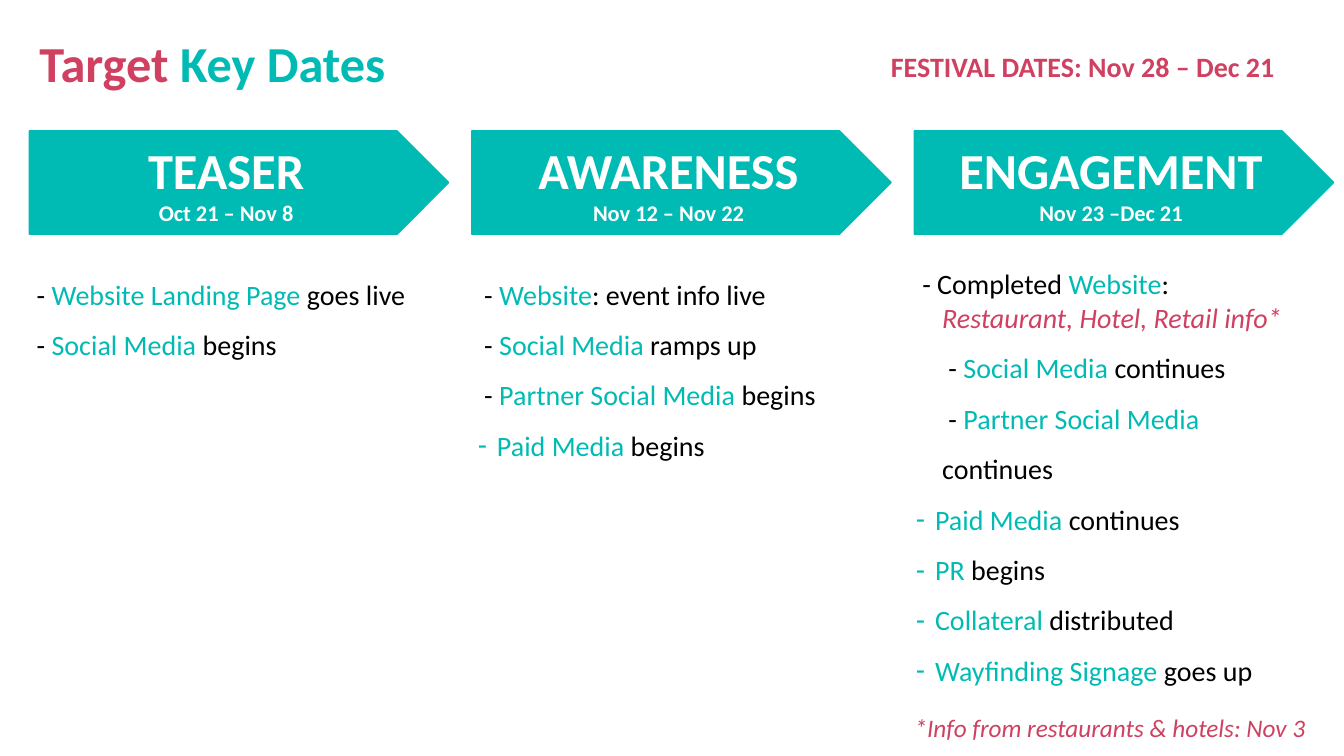
from lxml import etree
from pptx import Presentation
from pptx.dml.color import RGBColor
from pptx.enum.shapes import MSO_SHAPE
from pptx.enum.text import MSO_ANCHOR, MSO_AUTO_SIZE, PP_ALIGN
from pptx.oxml.ns import qn
from pptx.util import Cm, Pt

PENTAGON = MSO_SHAPE.PENTAGON
TOP, MIDDLE = MSO_ANCHOR.TOP, MSO_ANCHOR.MIDDLE
NO_AUTOFIT = MSO_AUTO_SIZE.NONE
LEFT, CENTER = PP_ALIGN.LEFT, PP_ALIGN.CENTER

TEAL, ROSE, BLACK, WHITE = "00BBB4", "CF4061", "000000", "FFFFFF"
FONT = "Calibri"

# Content
TITLE = [("Target ", ROSE), ("Key Dates", TEAL)]
FESTIVAL = "FESTIVAL DATES: Nov 28 – Dec 21"
FOOTNOTE = "*Info from restaurants & hotels: Nov 3"

# Paragraph styles: left margin (cm), first-line indent (cm), line spacing, bullet
PLAIN = (0, 0, 1.5, None)
HANGING = (0.66, -0.66, 1.0, None)
INDENTED = (0.66, 0, 1.5, None)
DASHED = (0.48, -0.48, 1.5, "-")

# Phases: name, dates, activities as (style, lead, highlight, rest, detail line)
PHASES = [
    ("TEASER", "Oct 21 – Nov 8", [
        (PLAIN, " - ", "Website Landing Page ", "goes live", ""),
        (PLAIN, " - ", "Social Media ", "begins", ""),
    ]),
    ("AWARENESS", "Nov 12 – Nov 22", [
        (PLAIN, " - ", "Website", ": event info live", ""),
        (PLAIN, " - ", "Social Media", " ramps up", ""),
        (PLAIN, " - ", "Partner Social Media", " begins", ""),
        (DASHED, "", "Paid Media", " begins", ""),
    ]),
    ("ENGAGEMENT", "Nov 23 –Dec 21", [
        (HANGING, " - Completed ", "Website", ":", "Restaurant, Hotel, Retail info*"),
        (INDENTED, " - ", "Social Media ", "continues", ""),
        (INDENTED, " - ", "Partner Social Media ", "continues", ""),
        (DASHED, "", "Paid Media ", "continues", ""),
        (DASHED, "", "PR", " begins", ""),
        (DASHED, "", "Collateral", " distributed", ""),
        (DASHED, "", "Wayfinding Signage ", "goes up", ""),
    ]),
]

# Layout, in cm
ARROW_LEFT, ARROW_TOP, ARROW_PITCH = 0.74, 3.3, 11.15
ARROW_WIDTH, ARROW_HEIGHT = 10.57, 2.6
LIST_WIDTH = 10.31
# Placeholder index, left, top, height of each activity list
LIST_BOXES = [(2, 0.51, 6.43, 4.95), (4, 11.79, 6.43, 9.07), (1, 22.83, 6.6, 13.08)]


def rgb(value):
    return RGBColor.from_string(value)


def place(shape, left, top, width, height):
    shape.left, shape.top = Cm(left), Cm(top)
    shape.width, shape.height = Cm(width), Cm(height)


def add_run(paragraph, text, color, size, bold=False, italic=False):
    run = paragraph.add_run()
    run.text = text
    font = run.font
    font.name, font.size, font.bold, font.italic = FONT, Pt(size), bold, italic
    font.color.rgb = rgb(color)


def style_paragraph(paragraph, style):
    margin, indent, spacing, bullet = style
    properties = paragraph._p.get_or_add_pPr()
    properties.set("marL", str(Cm(margin)))
    properties.set("indent", str(Cm(indent)))
    if bullet:
        etree.SubElement(properties, qn("a:buChar")).set("char", bullet)
    else:
        etree.SubElement(properties, qn("a:buNone"))
    paragraph.alignment = LEFT
    paragraph.line_spacing = spacing
    paragraph.space_before = paragraph.space_after = Pt(0)


def fill_list(frame, activities):
    frame.word_wrap = True
    frame.auto_size = NO_AUTOFIT
    frame.vertical_anchor = TOP
    for i, (style, lead, highlight, rest, detail) in enumerate(activities):
        paragraph = frame.add_paragraph() if i else frame.paragraphs[0]
        style_paragraph(paragraph, style)
        if lead:
            add_run(paragraph, lead, BLACK, 20)
        add_run(paragraph, highlight, TEAL, 20)
        add_run(paragraph, rest, BLACK, 20)
        if detail:
            paragraph.add_line_break()
            add_run(paragraph, detail, ROSE, 20, italic=True)


def add_note(slide, text, box, size, bold=False, italic=False):
    note = slide.shapes.add_textbox(*map(Cm, box))
    note.text_frame.word_wrap = True
    paragraph = note.text_frame.paragraphs[0]
    paragraph.line_spacing = 1.5
    add_run(paragraph, text, ROSE, size, bold, italic)


def add_phase_arrow(slide, column, name, dates):
    arrow = slide.shapes.add_shape(
        PENTAGON, Cm(ARROW_LEFT + column * ARROW_PITCH), Cm(ARROW_TOP),
        Cm(ARROW_WIDTH), Cm(ARROW_HEIGHT))
    arrow.shadow.inherit = False
    arrow.fill.solid()
    arrow.fill.fore_color.rgb = rgb(TEAL)
    arrow.line.color.rgb = rgb(TEAL)
    arrow.line.width = Pt(1)
    frame = arrow.text_frame
    frame.vertical_anchor = MIDDLE
    name_line, dates_line = frame.paragraphs[0], frame.add_paragraph()
    for paragraph, text, size in ((name_line, name, 36), (dates_line, dates, 16)):
        paragraph.alignment = CENTER
        add_run(paragraph, text, WHITE, size, bold=True)


def main():
    deck = Presentation()
    deck.slide_width, deck.slide_height = Cm(33.87), Cm(19.05)
    slide = deck.slides.add_slide(deck.slide_layouts[4])
    holders = {holder.placeholder_format.idx: holder for holder in slide.placeholders}

    # Title
    title = slide.shapes.title
    place(title, 0.74, 0.69, 19.71, 1.8)
    title.text_frame.auto_size = NO_AUTOFIT
    title.text_frame.vertical_anchor = TOP
    heading = title.text_frame.paragraphs[0]
    heading.alignment = LEFT
    for text, color in TITLE:
        add_run(heading, text, color, 36, bold=True)

    # Phases: arrow above its activity list
    for column, (name, dates, activities) in enumerate(PHASES):
        add_phase_arrow(slide, column, name, dates)
        index, left, top, height = LIST_BOXES[column]
        place(holders[index], left, top, LIST_WIDTH, height)
        fill_list(holders[index].text_frame, activities)

    # Festival dates and footnote
    add_note(slide, FESTIVAL, (22.2, 0.69, 11.4, 2.39), 20, bold=True)
    add_note(slide, FOOTNOTE, (22.8, 17.45, 11, 1.6), 18, italic=True)

    # Unused placeholder
    spare = holders[3]._element
    spare.getparent().remove(spare)

    deck.save("out.pptx")


if __name__ == "__main__":
    main()
